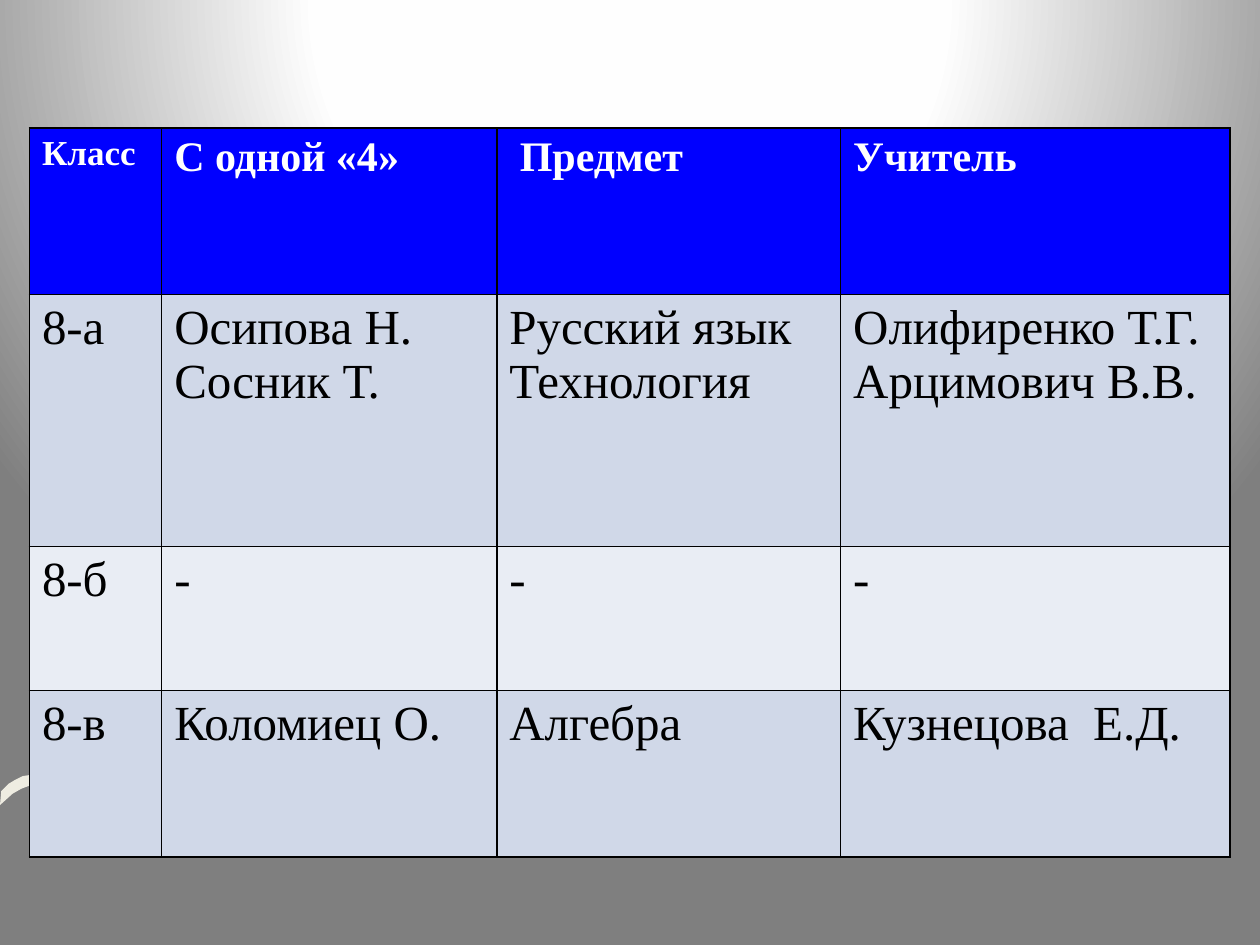
from dataclasses import dataclass

from lxml import etree
from pptx import Presentation
from pptx.dml.color import RGBColor
from pptx.oxml import parse_xml
from pptx.oxml.ns import nsdecls
from pptx.util import Pt


@dataclass(frozen=True)
class Theme:
    font: str = "Times New Roman"
    header_fill: str = "0000FF"
    header_text: str = "FFFFFF"
    body_text: str = "000000"
    bands: tuple = ("D0D8E8", "E9EDF4")
    border: str = "000000"
    wave: str = "EEECE1"
    backdrop: tuple = ((0, "FFFFFF"), (40, "FEFEFE"), (100, "7F7F7F"))
    first_header_size: int = 20
    header_size: int = 24
    body_size: int = 28
    border_width: int = 1


THEME = Theme()

COLUMN_WIDTHS = (75.6, 191.5, 196.5, 222.5)
ROW_HEIGHTS = (95, 144, 82.5, 95)
ROWS = (
    ("Класс", "С одной «4»", " Предмет", "Учитель"),
    ("8-а", "Осипова Н.\nСосник Т.", "Русский язык\nТехнология",
     "Олифиренко Т.Г.\nАрцимович В.В."),
    ("8-б", "-", "-", "-"),
    ("8-в", "Коломиец О.", "Алгебра", "Кузнецова  Е.Д."),
)

# Outline of the ribbon, in hundredths of an inch (0.72 pt)
WAVE_UNIT = Pt(0.72)
WAVE = (
    (1, 628), (7, 622), (12, 619), (18, 616), (25, 615), (32, 614), (39, 613),
    (49, 614), (56, 615), (62, 617), (71, 622), (76, 626), (82, 631), (88, 634),
    (97, 636), (109, 637), (118, 637), (126, 635), (134, 632), (140, 628),
    (149, 621), (156, 618), (165, 614), (173, 612), (181, 612), (194, 613),
    (205, 615), (211, 618), (219, 623), (227, 629), (234, 632), (244, 635),
    (253, 635), (263, 635), (270, 633), (277, 631), (284, 626), (290, 622),
    (296, 618), (305, 615), (311, 613), (320, 612), (331, 611), (340, 612),
    (348, 615), (354, 617), (360, 621), (368, 627), (374, 630), (381, 633),
    (390, 635), (400, 635), (409, 634), (419, 630), (423, 627), (428, 623),
    (430, 622), (432, 622), (434, 623), (435, 625), (435, 630), (432, 632),
    (428, 636), (422, 639), (416, 641), (408, 643), (399, 644), (389, 643),
    (381, 643), (374, 641), (367, 639), (360, 635), (356, 631), (350, 627),
    (343, 623), (336, 621), (327, 620), (319, 620), (308, 623), (303, 625),
    (296, 629), (291, 632), (282, 637), (275, 640), (266, 643), (256, 644),
    (249, 644), (239, 643), (230, 640), (220, 635), (214, 630), (208, 626),
    (202, 623), (196, 621), (186, 620), (177, 620), (169, 621), (159, 625),
    (153, 629), (144, 635), (135, 640), (124, 644), (114, 645), (104, 645),
    (94, 644), (86, 642), (78, 638), (71, 633), (65, 629), (59, 625),
    (51, 623), (44, 622), (33, 622), (25, 623), (17, 626), (10, 630), (0, 639),
)


def color(value):
    return RGBColor.from_string(value)


def paint_background(page):
    """Radial gradient centred above the page."""
    stops = "".join(
        f'<a:gs pos="{position * 1000}"><a:srgbClr val="{value}"/></a:gs>'
        for position, value in THEME.backdrop)
    background = parse_xml(
        f'<p:bg {nsdecls("p", "a")}><p:bgPr><a:gradFill rotWithShape="1">'
        f'<a:gsLst>{stops}</a:gsLst><a:path path="circle">'
        '<a:fillToRect l="50000" t="-80000" r="50000" b="180000"/></a:path>'
        '</a:gradFill><a:effectLst/></p:bgPr></p:bg>')
    page.element.cSld.insert(0, background)


def add_wave(page):
    builder = page.shapes.build_freeform(*WAVE[0], scale=WAVE_UNIT)
    builder.add_line_segments(WAVE[1:], close=True)
    wave = builder.convert_to_shape()
    wave.shadow.inherit = False
    wave.fill.solid()
    wave.fill.fore_color.rgb = color(THEME.wave)
    wave.line.fill.background()


def add_borders(cell):
    properties = cell._tc.get_or_add_tcPr()
    for index, side in enumerate(("lnL", "lnR", "lnT", "lnB")):
        line = parse_xml(f'<a:{side} {nsdecls("a")} w="{Pt(THEME.border_width)}"/>')
        fill = etree.SubElement(line, line.tag.replace(side, "solidFill"))
        etree.SubElement(fill, line.tag.replace(side, "srgbClr"), val=THEME.border)
        properties.insert(index, line)


def fill_cell(cell, text, fill, text_color, size, bold):
    cell.fill.solid()
    cell.fill.fore_color.rgb = color(fill)
    add_borders(cell)
    cell.text_frame.text = text
    for para in cell.text_frame.paragraphs:
        for span in para.runs:
            span.font.name = THEME.font
            span.font.size = Pt(size)
            span.font.bold = bold
            span.font.color.rgb = color(text_color)


def add_results_table(page):
    frame = page.shapes.add_table(
        len(ROWS), len(COLUMN_WIDTHS), Pt(16.8), Pt(73.2),
        Pt(sum(COLUMN_WIDTHS)), Pt(sum(ROW_HEIGHTS)))
    table = frame.table
    for column, width in zip(table.columns, COLUMN_WIDTHS):
        column.width = Pt(width)
    for row, height in zip(table.rows, ROW_HEIGHTS):
        row.height = Pt(height)

    for column, text in enumerate(ROWS[0]):
        size = THEME.header_size if column else THEME.first_header_size
        fill_cell(table.cell(0, column), text, THEME.header_fill,
                  THEME.header_text, size, True)
    for row, texts in enumerate(ROWS[1:], start=1):
        band = THEME.bands[(row - 1) % 2]
        for column, text in enumerate(texts):
            fill_cell(table.cell(row, column), text, band,
                      THEME.body_text, THEME.body_size, False)


def main():
    deck = Presentation()
    deck.slide_width, deck.slide_height = Pt(720), Pt(540)
    page = deck.slides.add_slide(deck.slide_layouts[6])
    paint_background(page)
    add_wave(page)
    add_results_table(page)
    deck.save("out.pptx")


if __name__ == "__main__":
    main()
